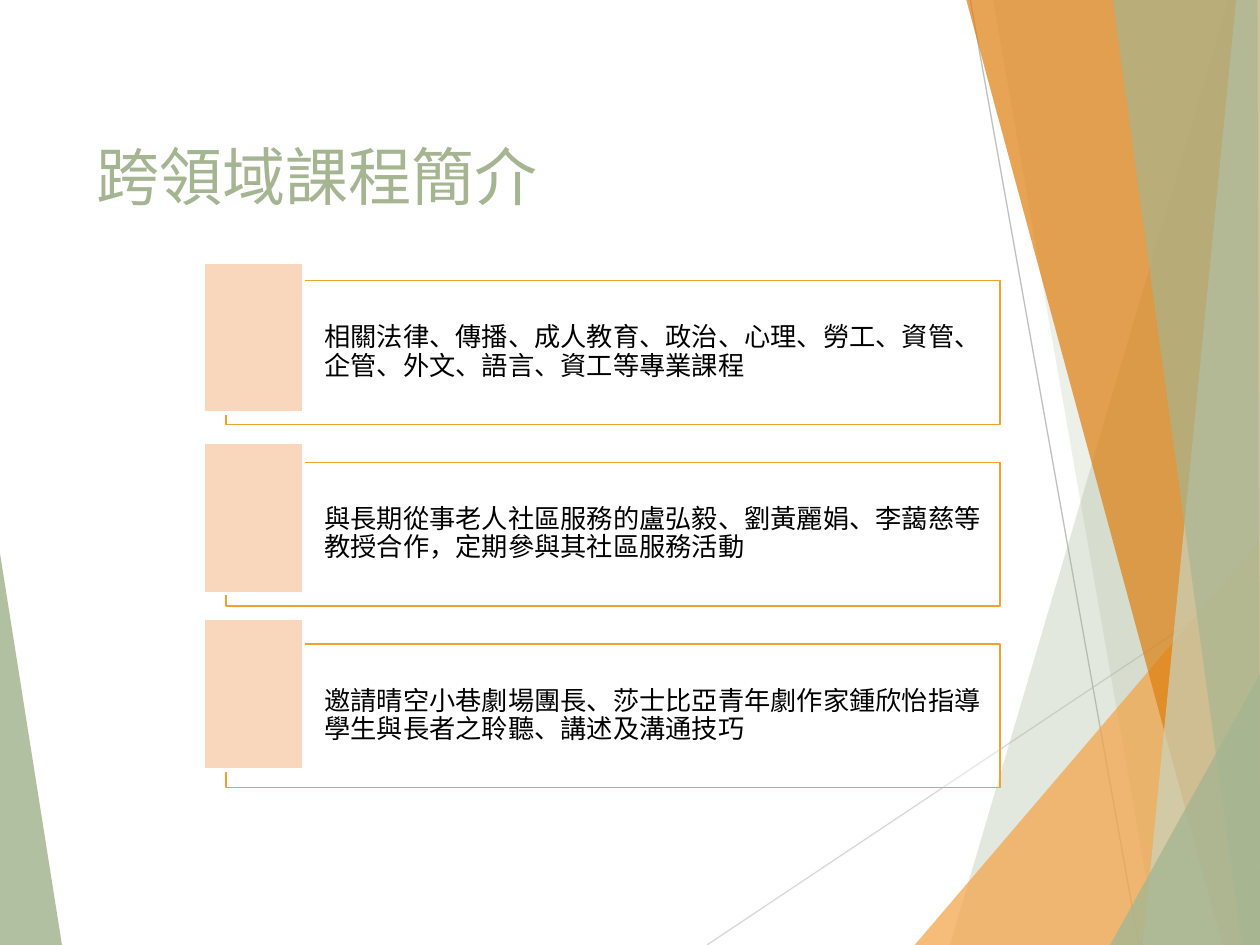
from lxml.etree import SubElement
from pptx import Presentation
from pptx.dml.color import RGBColor
from pptx.enum.shapes import MSO_CONNECTOR as Link, MSO_SHAPE as Kind
from pptx.enum.text import MSO_ANCHOR as Anchor, PP_ALIGN as Align
from pptx.oxml.ns import qn
from pptx.util import Cm, Pt

HUES = {
    "sage": "A5B592", "mist": "C9D3BE", "amber": "F3A447", "rust": "DD7E0E",
    "gold": "EFA22D", "peach": "F8D7BC", "white": "FFFFFF", "black": "000000",
    "gray": "BFBFBF", "pale": "D9D9D9",
}
WIDE, HIGH = 25.4, 19.05


def paint(shape, hue, alpha=100):
    """Solid fill without shadow; alpha in percent."""
    shape.shadow.inherit = False
    shape.fill.solid()
    shape.fill.fore_color.rgb = RGBColor.from_string(HUES[hue])
    if alpha < 100:
        tint = shape.fill._xPr.find(qn("a:solidFill"))[0]
        SubElement(tint, qn("a:alpha"), val=str(alpha * 1000))


def write(para, text, font, size, hue):
    run = para.add_run()
    run.text = text
    run.font.name = font
    run.font.size = Pt(size)
    run.font.color.rgb = RGBColor.from_string(HUES[hue])
    para.alignment = Align.LEFT


deck = Presentation()
deck.slide_width, deck.slide_height = Cm(WIDE), Cm(HIGH)
slide = deck.slides.add_slide(deck.slide_layouts[5])
shapes = slide.shapes

# Title
title = shapes.title
title.left, title.top, title.width, title.height = Cm(1.7), Cm(1.7), Cm(17.63), Cm(3.66)
title.text_frame.vertical_anchor = Anchor.MIDDLE
write(title.text_frame.paragraphs[0], "跨領域課程簡介", "Cabin", 36, "sage")

# Thin lines behind the facets
for x1, y1, x2, y2, hue in [
    (14.25, HIGH, WIDE, 11.61, "pale"),
    (19.56, 0, 22.96, HIGH, "gray"),
]:
    line = shapes.add_connector(Link.STRAIGHT, Cm(x1), Cm(y1), Cm(x2), Cm(y2))
    line.line.color.rgb = RGBColor.from_string(HUES[hue])
    line.line.width = Pt(0.75)
    SubElement(line._element.spPr, qn("a:effectLst"))

# Facets: colour, opacity, corners
facets = [
    ("sage", 85, [(0, 11.15), (1.25, HIGH), (0, HIGH)]),
    ("sage", 30, [(24.77, 0), (19.15, HIGH), (WIDE, HIGH), (WIDE, 0)]),
    ("sage", 20, [(20.02, 0), (23.34, HIGH), (WIDE, HIGH), (WIDE, 0)]),
    ("amber", 72, [(18.44, HIGH), (WIDE, 10.9), (WIDE, HIGH)]),
    ("rust", 70, [(19.48, 0), (24.64, HIGH), (WIDE, HIGH), (WIDE, 0)]),
    ("mist", 70, [(24.92, 0), (23.04, HIGH), (WIDE, HIGH), (WIDE, 0)]),
    ("sage", 65, [(22.43, 0), (25.04, HIGH), (WIDE, HIGH), (25.35, 0)]),
    ("sage", 80, [(22.38, HIGH), (WIDE, 13.59), (WIDE, HIGH)]),
]
for hue, alpha, spots in facets:
    spots = [(Cm(x), Cm(y)) for x, y in spots]
    pen = shapes.build_freeform(*spots[0])
    pen.add_line_segments(spots[1:], close=True)
    facet = pen.convert_to_shape()
    paint(facet, hue, alpha)
    facet.line.fill.background()

# Course boxes: text, and how far the tab rises above the box
items = [
    ("相關法律、傳播、成人教育、政治、心理、勞工、資管、企管、外文、語言、資工等專業課程", 0.38),
    ("與長期從事老人社區服務的盧弘毅、劉黃麗娟、李藹慈等教授合作，定期參與其社區服務活動", 0.4),
    ("邀請晴空小巷劇場團長、莎士比亞青年劇作家鍾欣怡指導學生與長者之聆聽、講述及溝通技巧", 0.51),
]
for row, (text, rise) in enumerate(items):
    top = 5.66 + row * 3.66
    box = shapes.add_shape(Kind.RECTANGLE, Cm(4.56), Cm(top), Cm(15.6), Cm(2.9))
    paint(box, "white", 40)
    box.line.color.rgb = RGBColor.from_string(HUES["gold"])
    box.line.width = Pt(0.79)
    frame = box.text_frame
    frame.word_wrap = True
    frame.vertical_anchor = Anchor.MIDDLE
    frame.margin_left = Cm(1.98)
    frame.margin_right = frame.margin_top = frame.margin_bottom = Cm(0.15)
    para = frame.paragraphs[0]
    para.line_spacing = 0.9
    write(para, text, "Arial", 15, "black")

    tab = shapes.add_shape(Kind.RECTANGLE, Cm(4.09), Cm(top - rise), Cm(2.03), Cm(3.05))
    paint(tab, "peach")
    tab.line.color.rgb = RGBColor.from_string(HUES["white"])
    tab.line.width = Pt(2)

deck.save("out.pptx")
